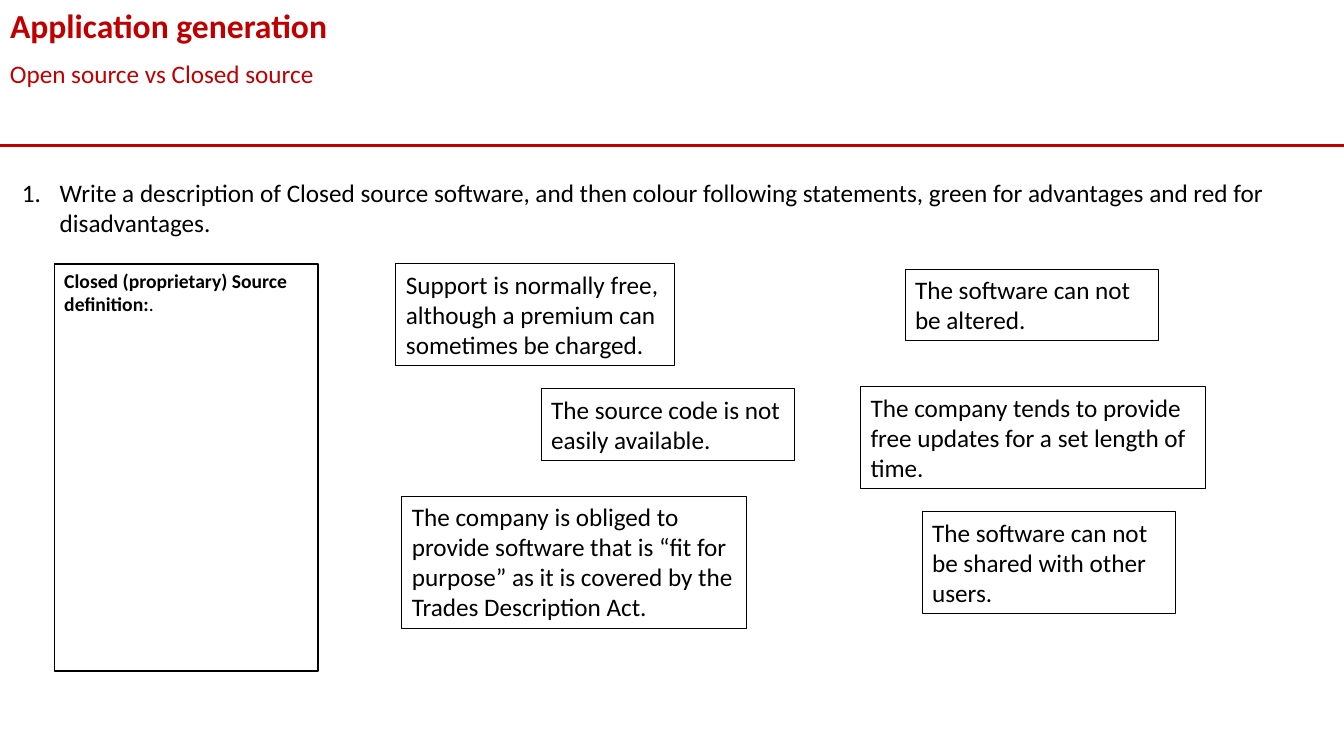
from lxml.etree import SubElement
from pptx import Presentation
from pptx.dml.color import RGBColor
from pptx.enum.shapes import MSO_CONNECTOR, MSO_SHAPE
from pptx.enum.text import MSO_ANCHOR, MSO_AUTO_SIZE, PP_ALIGN
from pptx.oxml.ns import qn
from pptx.util import Cm, Pt

RED = RGBColor(0xC0, 0x00, 0x00)
BLACK = RGBColor(0x00, 0x00, 0x00)
WHITE = RGBColor(0xFF, 0xFF, 0xFF)
FONT = "Calibri"

TITLE = "Application generation"
SUBTITLE = "Open source vs Closed source"
TASK = ("Write a description of Closed source software, and then colour following "
        "statements, green for advantages and red for disadvantages.")
DEFINITION = "Closed (proprietary) Source definition:"

# text, left, top, width, number of text lines; lengths in cm
STATEMENTS = [
    ("Support is normally free, although a premium can sometimes be charged.",
     9.98, 6.65, 7.01, 3),
    ("The company tends to provide free updates for a set length of time.",
     21.69, 9.75, 8.69, 3),
    ("The company is obliged to provide software that is “fit for purpose” "
     "as it is covered by the Trades Description Act.",
     10.13, 12.5, 8.69, 4),
    ("The source code is not easily available.", 13.64, 9.8, 6.38, 2),
    ("The software can not be altered.", 22.81, 6.78, 6.38, 2),
    ("The software can not be shared with other users.", 23.24, 12.9, 6.38, 3),
]
LINE_HEIGHT = 0.76
BOX_PADDING = 0.29
SLIDE_WIDTH = 33.87


def place(shape, left, top, width, height):
    shape.left, shape.top = Cm(left), Cm(top)
    shape.width, shape.height = Cm(width), Cm(height)


def write(shape, spans, size, color):
    """Fill the shape with one top-left paragraph of (text, bold) spans."""
    frame = shape.text_frame
    frame.word_wrap = True
    frame.auto_size = MSO_AUTO_SIZE.NONE
    frame.vertical_anchor = MSO_ANCHOR.TOP
    para = frame.paragraphs[0]
    para.alignment = PP_ALIGN.LEFT
    para.space_before = Pt(0)
    for text, bold in spans:
        span = para.add_run()
        span.text = text
        span.font.name = FONT
        span.font.size = Pt(size)
        span.font.bold = bold
        span.font.color.rgb = color
    return para


def add_box(page, left, top, width, height, line_width):
    box = page.shapes.add_shape(MSO_SHAPE.RECTANGLE, Cm(left), Cm(top),
                                Cm(width), Cm(height))
    box.shadow.inherit = False
    box.fill.solid()
    box.fill.fore_color.rgb = WHITE
    box.line.color.rgb = BLACK
    box.line.width = Pt(line_width)
    return box


def number(para, indent):
    properties = para._p.get_or_add_pPr()
    properties.set("marL", str(indent))
    properties.set("indent", str(-indent))
    SubElement(properties, qn("a:buFont"), typeface="+mj-lt")
    SubElement(properties, qn("a:buAutoNum"), type="arabicPeriod")


def main():
    deck = Presentation()
    deck.slide_width, deck.slide_height = Cm(SLIDE_WIDTH), Cm(19.05)
    page = deck.slides.add_slide(deck.slide_layouts[1])

    rule = page.shapes.add_connector(MSO_CONNECTOR.STRAIGHT, Cm(0), Cm(3.66),
                                     Cm(SLIDE_WIDTH), Cm(3.66))
    rule.line.color.rgb = RED
    rule.line.width = Pt(2.25)
    SubElement(rule._element.spPr, qn("a:effectLst"))

    title = page.shapes.title
    place(title, 0, 0, SLIDE_WIDTH, 1.28)
    write(title, [(TITLE, True)], 24, RED)

    subtitle = page.shapes.add_textbox(Cm(0), Cm(1.35), Cm(SLIDE_WIDTH), Cm(1.03))
    write(subtitle, [(SUBTITLE, False)], 18, RED)

    task = page.placeholders[1]
    place(task, 0.3, 4.34, 33.2, 1.8)
    number(write(task, [(TASK, False)], 18, BLACK), Cm(0.95))

    definition = add_box(page, 1.37, 6.65, 6.65, 10.26, 1)
    write(definition, [(DEFINITION, True), (".", False)], 14, BLACK)

    for text, left, top, width, lines in STATEMENTS:
        height = BOX_PADDING + lines * LINE_HEIGHT
        box = add_box(page, left, top, width, height, 0.75)
        write(box, [(text, False)], 18, BLACK)

    deck.save("out.pptx")


if __name__ == "__main__":
    main()
